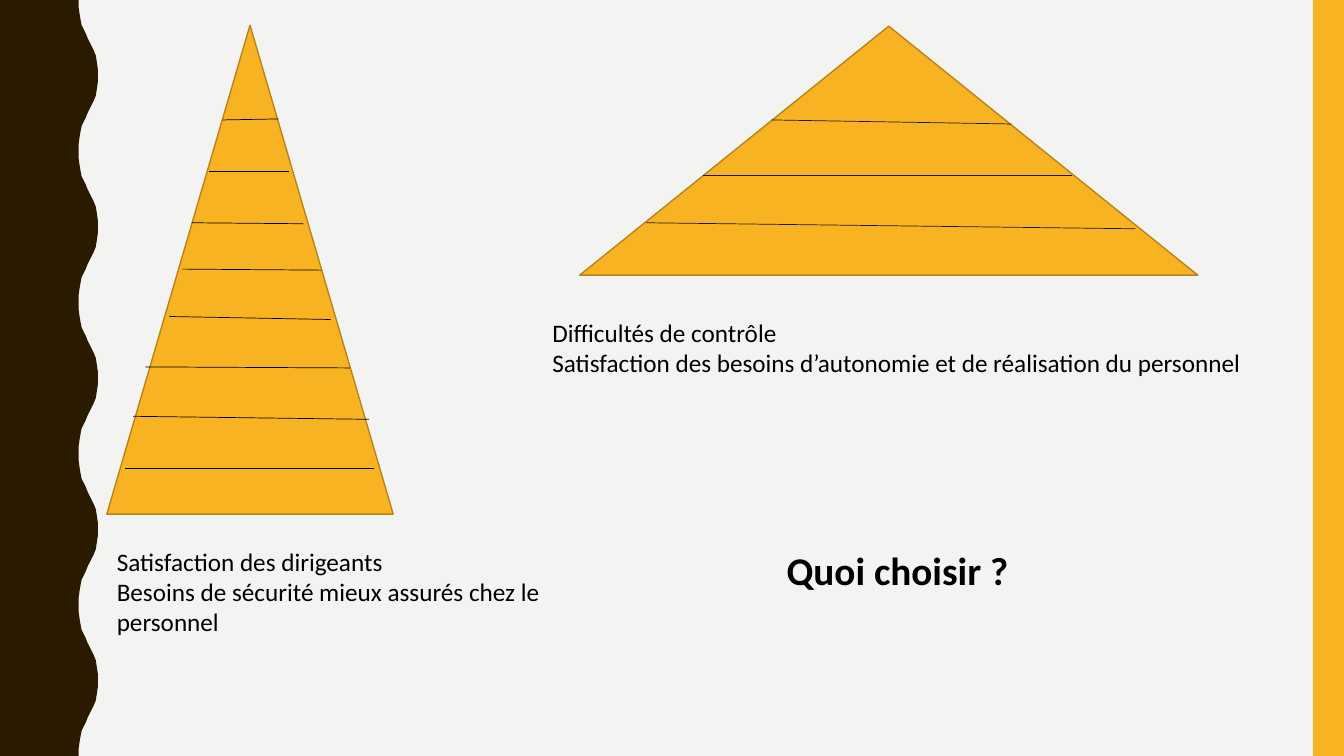
import pptx
import pptx.dml.color
import pptx.enum.shapes
import pptx.enum.text
import pptx.oxml.ns
import pptx.util
from lxml import etree
from pptx.util import Inches

BROWN, AMBER, AMBER_EDGE = "2A1A00", "F8B323", "B7841A"
BLACK, CHARCOAL, PAPER = "000000", "191917", "F3F3F2"
SHAPE = pptx.enum.shapes.MSO_SHAPE

# Half of one wave on the left band: (x, y) from trough to crest
WAVE_PERIOD, WAVE_COUNT = 1.5, 5
HALF_WAVE = [(0.78, 0), (0.78, 0.07), (0.79, 0.14), (0.8, 0.2), (0.81, 0.25),
             (0.83, 0.29), (0.85, 0.33), (0.87, 0.38), (0.89, 0.42), (0.91, 0.46),
             (0.93, 0.5), (0.95, 0.55), (0.96, 0.61), (0.97, 0.68), (0.97, 0.75)]

# Level lines of each pyramid: x1, y1, x2, y2
TALL_LEVELS = [(1.24, 4.65, 3.71, 4.65), (1.32, 4.13, 3.66, 4.16),
               (1.44, 3.64, 3.47, 3.65), (1.68, 3.14, 3.28, 3.17),
               (1.81, 2.67, 3.19, 2.68), (1.9, 2.21, 3.01, 2.22),
               (2.07, 1.7, 2.87, 1.7), (2.21, 1.19, 2.76, 1.18)]
FLAT_LEVELS = [(6.41, 2.21, 11.26, 2.27), (6.97, 1.74, 10.63, 1.74),
               (7.65, 1.19, 10.03, 1.23)]


def rgb(color):
    return pptx.dml.color.RGBColor.from_string(color)


def paint(sp, fill, line=None):
    sp.shadow.inherit = False
    sp.fill.solid()
    sp.fill.fore_color.rgb = rgb(fill)
    if line:
        sp.line.color.rgb = rgb(line)
        sp.line.width = pptx.util.Pt(1)
    else:
        sp.line.fill.background()


def add_wavy_band(s):
    crest_to_trough = [(x, WAVE_PERIOD - y) for x, y in HALF_WAVE[-2::-1]]
    wave = HALF_WAVE + crest_to_trough
    edge = [(x, y + i * WAVE_PERIOD) for i in range(WAVE_COUNT) for x, y in wave]
    outline = edge + [(0, WAVE_PERIOD * WAVE_COUNT)]
    builder = s.shapes.build_freeform(0, 0)
    builder.add_line_segments([(Inches(x), Inches(y)) for x, y in outline], close=True)
    paint(builder.convert_to_shape(), BROWN)


def add_preset(s, kind, box, fill, line=None):
    sp = s.shapes.add_shape(kind, *map(Inches, box))
    paint(sp, fill, line)


def add_level(s, ends, color):
    cx = s.shapes.add_connector(pptx.enum.shapes.MSO_CONNECTOR.STRAIGHT,
                                *map(Inches, ends))
    cx.line.color.rgb = rgb(color)
    cx.line.width = pptx.util.Pt(0.5)
    etree.SubElement(cx._element.spPr, pptx.oxml.ns.qn("a:effectLst"))


def add_pyramid(s, box, levels, level_color):
    add_preset(s, SHAPE.ISOSCELES_TRIANGLE, box, AMBER, AMBER_EDGE)
    for ends in levels:
        add_level(s, ends, level_color)


def add_text(s, box, lines, size=18, bold=False, align="LEFT"):
    tf = s.shapes.add_textbox(*map(Inches, box)).text_frame
    tf.word_wrap = True
    for i, line in enumerate(lines):
        p = tf.add_paragraph() if i else tf.paragraphs[0]
        p.alignment = getattr(pptx.enum.text.PP_ALIGN, align)
        r = p.add_run()
        r.text = line
        r.font.name = "Calibri"
        r.font.size = pptx.util.Pt(size)
        r.font.bold = bold
        r.font.color.rgb = rgb(BLACK)


def main():
    prs = pptx.Presentation()
    prs.slide_width, prs.slide_height = Inches(13.33), Inches(7.5)
    s = prs.slides.add_slide(prs.slide_layouts[6])

    # Background and side bands
    s.background.fill.solid()
    s.background.fill.fore_color.rgb = rgb(PAPER)
    add_wavy_band(s)
    add_preset(s, SHAPE.RECTANGLE, (13.02, 0, 0.31, 7.5), AMBER)

    # Tall and flat hierarchies
    add_pyramid(s, (1.06, 0.25, 2.84, 4.85), TALL_LEVELS, BLACK)
    add_pyramid(s, (5.75, 0.26, 6.13, 2.47), FLAT_LEVELS, CHARCOAL)

    # Captions and closing question
    add_text(s, (5.38, 3.1, 7.03, 0.71),
             ["Difficultés de contrôle",
              "Satisfaction des besoins d’autonomie et de réalisation du personnel"])
    add_text(s, (1.06, 5.37, 4.59, 1.01),
             ["Satisfaction des dirigeants",
              "Besoins de sécurité mieux assurés chez le personnel"])
    add_text(s, (6.01, 5.37, 5.87, 0.57), ["Quoi choisir ? "], 28, True, "CENTER")

    prs.save("out.pptx")


if __name__ == "__main__":
    main()
